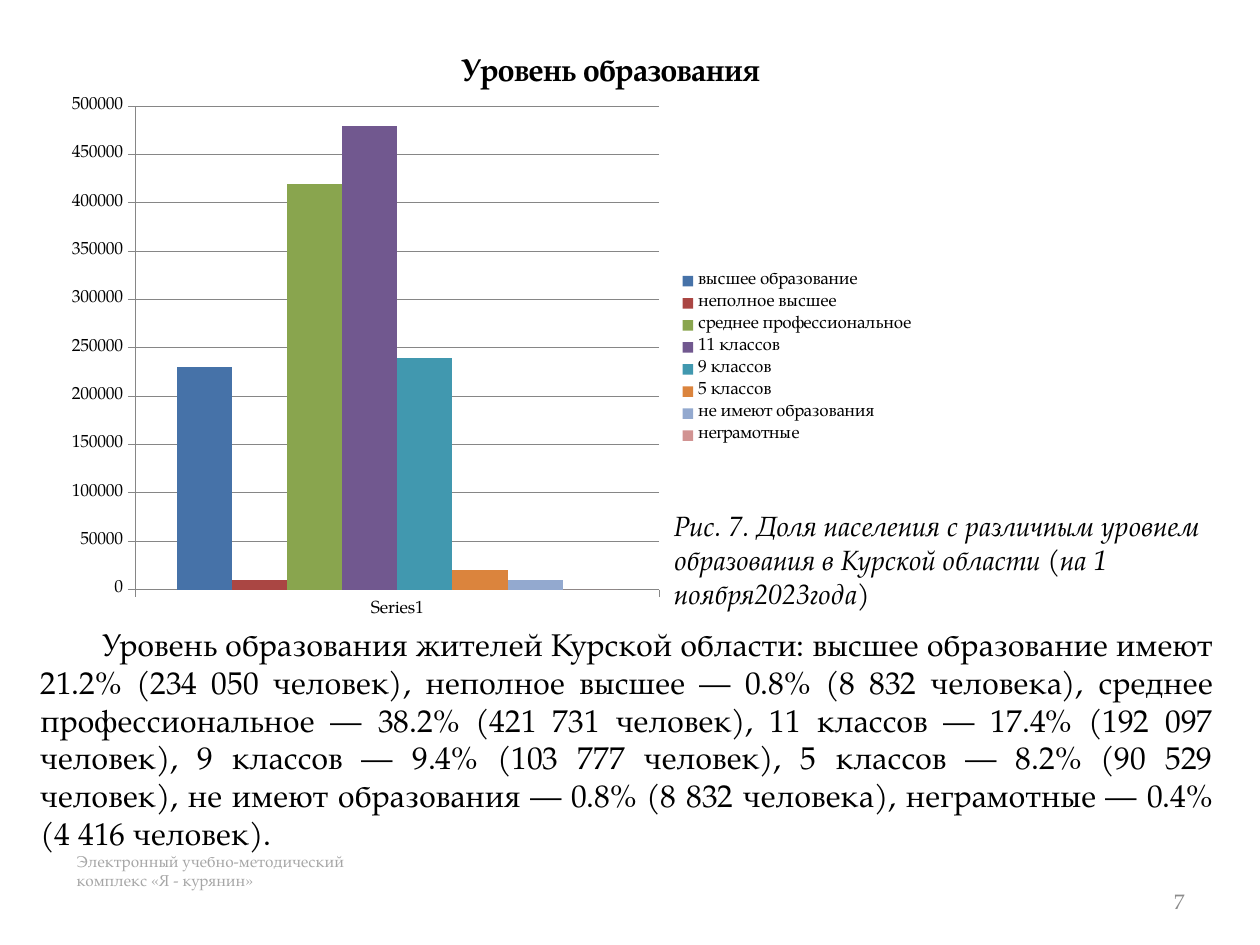
"""Build a slide on education levels in the Kursk region: column chart, caption and summary."""
from lxml import etree
from pptx import Presentation
from pptx.chart.data import CategoryChartData
from pptx.dml.color import RGBColor
from pptx.enum import chart as ch, text as t
from pptx.oxml.ns import qn
from pptx.util import Inches, Pt

FONT = "TeX Gyre Pagella"
COLORS = {"text": "000000", "footer": "A6A6A6", "number": "8C8C8C", "axis": "868686"}
LEVELS = [
    ("высшее образование", 230000, "4672A8"),
    ("неполное высшее", 10000, "AA4643"),
    ("среднее профессиональное", 420000, "89A54E"),
    ("11 классов", 480000, "71588F"),
    ("9 классов", 240000, "4198AF"),
    ("5 классов", 20000, "DB843D"),
    ("не имеют образования", 10000, "93A9CF"),
    ("неграмотные", 0, "D19392"),
]
PLOT = {"x": 0.093, "y": 0.02, "w": 0.6, "h": 0.92}
SUMMARY = (
    "Уровень образования жителей Курской области: высшее образование имеют 21.2% "
    "(234 050 человек), неполное высшее — 0.8% (8 832 человека), среднее "
    "профессиональное — 38.2% (421 731 человек), 11 классов — 17.4% (192 097 человек), "
    "9 классов — 9.4% (103 777 человек), 5 классов — 8.2% (90 529 человек), не имеют "
    "образования — 0.8% (8 832 человека), неграмотные — 0.4% (4 416 человек)."
)


def assign(target, values):
    """Set each named attribute on the target."""
    for name, value in values.items():
        setattr(target, name, value)


class SlideBuilder:
    """Hold the style and the current slide."""

    def __init__(self, prs):
        """Add a title and content slide."""
        self.s = prs.slides.add_slide(prs.slide_layouts[1])

    def style(self, font, size, color="text", **extra):
        """Apply the deck font with a size, a colour and extra attributes."""
        assign(font, {"name": FONT, "size": Pt(size), **extra})
        font.color.rgb = RGBColor.from_string(COLORS[color])

    def fill(self, sp, box, lines, size, color="text", align=t.PP_ALIGN.LEFT,
             anchor=t.MSO_ANCHOR.TOP, wrap=True, indent=0, spacing=1, **extra):
        """Place a text shape and write one formatted paragraph in it."""
        assign(sp, dict(zip(("left", "top", "width", "height"), map(Inches, box))))
        tf = sp.text_frame
        assign(tf, {"word_wrap": wrap, "vertical_anchor": anchor,
                    "auto_size": t.MSO_AUTO_SIZE.NONE})
        p = tf.paragraphs[0]
        assign(p, {"alignment": align, "line_spacing": spacing, "space_before": Pt(0)})
        pPr = p._p.get_or_add_pPr()
        pPr.set("marL", "0")
        pPr.set("indent", str(Inches(indent)))
        etree.SubElement(pPr, qn("a:buNone"))
        for i, line in enumerate(lines):
            if i:
                p.add_line_break()
            r = p.add_run()
            r.text = line
            self.style(r.font, size, color, **extra)

    def title(self, box, line, size, **fmt):
        """Write the title placeholder."""
        self.fill(self.s.shapes.title, box, [line], size, **fmt)

    def body(self, box, line, size, **fmt):
        """Write the body placeholder."""
        self.fill(self.s.placeholders[1], box, [line], size, **fmt)

    def text(self, box, lines, size, **fmt):
        """Add a text box."""
        sp = self.s.shapes.add_textbox(*map(Inches, box))
        self.fill(sp, box, lines, size, **fmt)

    def columns(self, box, category, levels, size):
        """Add a clustered column chart with one series per level."""
        data = CategoryChartData(number_format="0")
        data.categories = [category]
        for name, value, _ in levels:
            data.add_series(name, [value])
        chart = self.s.shapes.add_chart(
            ch.XL_CHART_TYPE.COLUMN_CLUSTERED, *map(Inches, box), data).chart
        assign(chart, {"has_title": False, "has_legend": True})
        self.style(chart.font, size)
        assign(chart.legend, {"position": ch.XL_LEGEND_POSITION.RIGHT,
                              "include_in_layout": False})
        plot = chart.plots[0]
        assign(plot, {"gap_width": 150, "overlap": 0, "vary_by_categories": False})
        for series, (_, _, color) in zip(plot.series, levels):
            series.format.fill.solid()
            series.format.fill.fore_color.rgb = RGBColor.from_string(color)
        assign(chart.value_axis, {"minimum_scale": 0, "maximum_scale": 500000,
                                  "major_unit": 50000, "has_major_gridlines": True})
        for axis in (chart.category_axis, chart.value_axis):
            axis.major_tick_mark = ch.XL_TICK_MARK.OUTSIDE
            self.line(axis.format.line)
        self.line(chart.value_axis.major_gridlines.format.line)
        self.layout(chart)

    def line(self, line):
        """Draw a thin grey axis line."""
        line.width = Pt(0.75)
        line.color.rgb = RGBColor.from_string(COLORS["axis"])

    def layout(self, chart):
        """Fix the inner plot area by fractions of the chart."""
        area = chart._chartSpace.chart.plotArea
        for old in area.findall(qn("c:layout")):
            area.remove(old)
        layout = etree.Element(qn("c:layout"))
        area.insert(0, layout)
        manual = etree.SubElement(layout, qn("c:manualLayout"))
        values = {"layoutTarget": "inner", "xMode": "edge", "yMode": "edge", **PLOT}
        for name, value in values.items():
            etree.SubElement(manual, qn(f"c:{name}")).set("val", str(value))


def main():
    """Build and save the slide."""
    prs = Presentation()
    assign(prs, {"slide_width": Inches(10), "slide_height": Inches(7.5)})
    b = SlideBuilder(prs)
    b.text((0.51, 6.71, 5, 0.4),
           ["Электронный учебно-методический", "комплекс «Я - курянин»"], 9, color="footer")
    b.text((7.17, 6.95, 2.33, 0.4), ["7"], 12, color="number",
           align=t.PP_ALIGN.RIGHT, anchor=t.MSO_ANCHOR.MIDDLE)
    b.title((3.03, 0.2, 3.14, 0.56), "Уровень образования", 18, bold=True,
            align=t.PP_ALIGN.CENTER, wrap=False, indent=0.49, spacing=1.5)
    b.columns((0.43, 0.76, 6.93, 4.17), "Series1", LEVELS, 10)
    b.text((5.25, 3.99, 4.57, 0.91),
           ["Рис. 7. Доля населения с различным уровнем образования "
            "в Курской области (на 1 ноября2023года)"], 16, italic=True)
    b.body((0.22, 4.91, 9.51, 1.62), SUMMARY, 18, align=t.PP_ALIGN.JUSTIFY, indent=0.49)
    prs.save("out.pptx")


if __name__ == "__main__":
    main()
